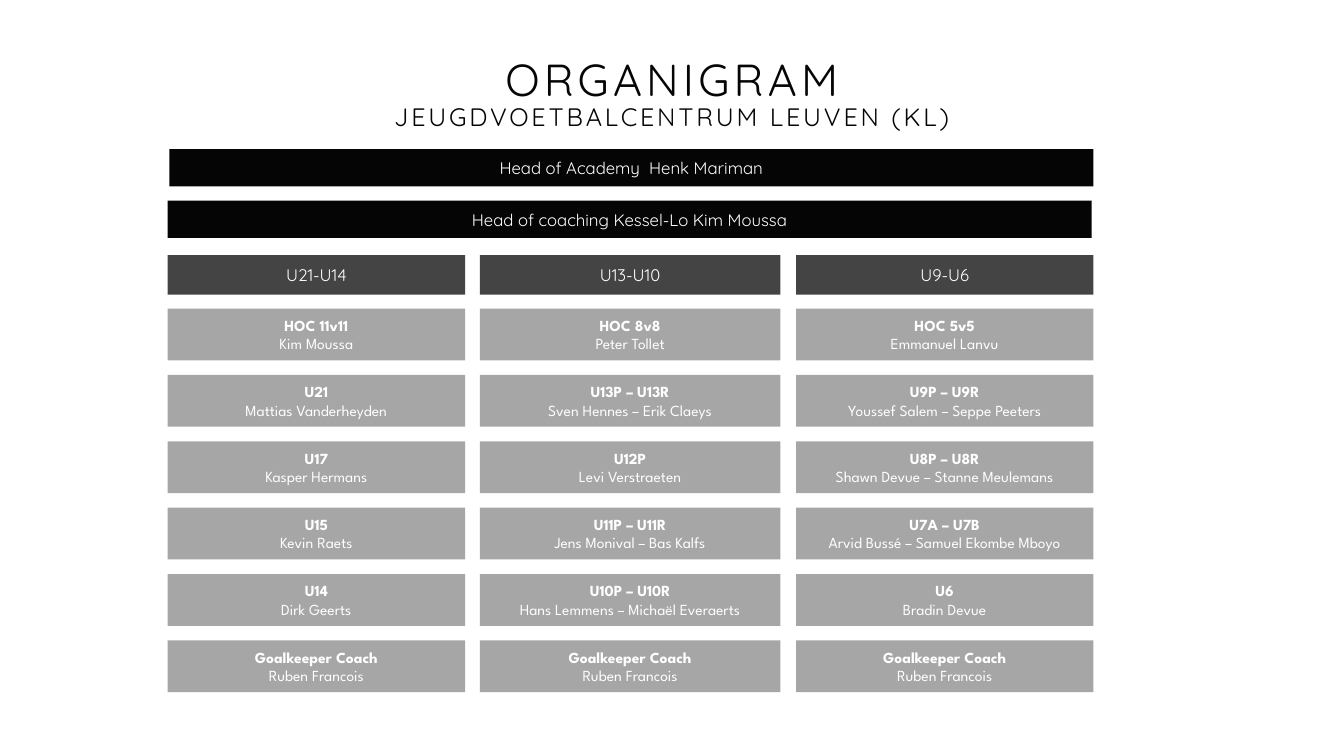
from dataclasses import dataclass

from pptx import Presentation
from pptx.dml.color import RGBColor
from pptx.enum.shapes import MSO_SHAPE as Shape
from pptx.enum.text import MSO_ANCHOR as Anchor, MSO_AUTO_SIZE as AutoSize, PP_ALIGN as Align
from pptx.util import Pt


@dataclass(frozen=True)
class Theme:
    black: RGBColor = RGBColor(0x05, 0x05, 0x05)
    dark: RGBColor = RGBColor(0x44, 0x44, 0x44)
    gray: RGBColor = RGBColor(0xA6, 0xA6, 0xA6)
    white: RGBColor = RGBColor(0xFF, 0xFF, 0xFF)
    heading_font: str = "Quicksand"
    card_font: str = "League Spartan"
    title_size: int = 32
    subtitle_size: int = 18
    bar_size: int = 12
    card_size: int = 11


THEME = Theme()
PAGE_WIDTH, PAGE_HEIGHT = 960, 540

# Leadership bars: text, left, top
BARS = [
    ("Head of Academy  Henk Mariman", 121, 106.6),
    ("Head of coaching Kessel-Lo Kim Moussa", 119.8, 143.4),
]
BAR_WIDTH, BAR_HEIGHT = 660, 26.6

# Age groups: heading, left, width, then (team, coaches) from top to bottom
AGE_GROUPS = [
    ("U21-U14", 119.8, 212.4, [
        ("HOC 11v11", "Kim Moussa"),
        ("U21", "Mattias Vanderheyden"),
        ("U17", "Kasper Hermans"),
        ("U15", "Kevin Raets"),
        ("U14", "Dirk Geerts"),
        ("Goalkeeper Coach", "Ruben Francois"),
    ]),
    ("U13-U10", 342.8, 214.6, [
        ("HOC 8v8", "Peter Tollet"),
        ("U13P – U13R", "Sven Hennes – Erik Claeys"),
        ("U12P", "Levi Verstraeten"),
        ("U11P – U11R", "Jens Monival – Bas Kalfs"),
        ("U10P – U10R", "Hans Lemmens – Michaël Everaerts"),
        ("Goalkeeper Coach", "Ruben Francois"),
    ]),
    ("U9-U6", 568.6, 212.4, [
        ("HOC 5v5", "Emmanuel Lanvu"),
        ("U9P – U9R", "Youssef Salem – Seppe Peeters"),
        ("U8P – U8R", "Shawn Devue – Stanne Meulemans"),
        ("U7A – U7B", "Arvid Bussé – Samuel Ekombe Mboyo"),
        ("U6", "Bradin Devue"),
        ("Goalkeeper Coach", "Ruben Francois"),
    ]),
]
GROUP_TOP, GROUP_HEIGHT = 182.2, 28.2
CARD_TOP, CARD_STEP, CARD_HEIGHT = 220.4, 47.4, 37


def add_span(para, text, font, size, color, bold=False):
    para.alignment = Align.CENTER
    span = para.add_run()
    span.text = text
    span.font.name = font
    span.font.size = Pt(size)
    span.font.color.rgb = color
    span.font.bold = bold
    return span


def fill_heading(box, text, top, height, size, tracking, anchor):
    """Full-width, letter-spaced heading line."""
    box.left, box.top = Pt(0), Pt(top)
    box.width, box.height = Pt(PAGE_WIDTH), Pt(height)
    frame = box.text_frame
    frame.word_wrap = True
    frame.auto_size = AutoSize.NONE
    frame.vertical_anchor = anchor
    para = frame.paragraphs[0]
    para.line_spacing = 0.8
    span = add_span(para, text, THEME.heading_font, size, THEME.black)
    span.font._element.set("spc", str(tracking * 100))


def add_block(page, left, top, width, height, color):
    box = page.shapes.add_shape(Shape.RECTANGLE, Pt(left), Pt(top), Pt(width), Pt(height))
    box.shadow.inherit = False
    box.fill.solid()
    box.fill.fore_color.rgb = color
    box.line.fill.background()
    box.text_frame.word_wrap = True
    box.text_frame.vertical_anchor = Anchor.MIDDLE
    return box.text_frame


def add_bar(page, text, left, top, width, height, color):
    frame = add_block(page, left, top, width, height, color)
    add_span(frame.paragraphs[0], text, THEME.heading_font, THEME.bar_size, THEME.white)


def add_card(page, team, coaches, left, top, width):
    frame = add_block(page, left, top, width, CARD_HEIGHT, THEME.gray)
    add_span(frame.paragraphs[0], team, THEME.card_font, THEME.card_size, THEME.white, bold=True)
    add_span(frame.add_paragraph(), coaches, THEME.card_font, THEME.card_size, THEME.white)


def main():
    deck = Presentation()
    deck.slide_width, deck.slide_height = Pt(PAGE_WIDTH), Pt(PAGE_HEIGHT)
    page = deck.slides.add_slide(deck.slide_layouts[5])

    # Title and subtitle
    fill_heading(page.shapes.title, "ORGANIGRAM", 39.6, 38.9,
                 THEME.title_size, 3, Anchor.BOTTOM)
    subtitle = page.shapes.add_textbox(Pt(0), Pt(0), Pt(PAGE_WIDTH), Pt(30))
    fill_heading(subtitle, "JEUGDVOETBALCENTRUM LEUVEN (KL)", 72.7, 28.8,
                 THEME.subtitle_size, 2, Anchor.TOP)

    # Leadership
    for text, left, top in BARS:
        add_bar(page, text, left, top, BAR_WIDTH, BAR_HEIGHT, THEME.black)

    # One column per age group
    for heading, left, width, cards in AGE_GROUPS:
        add_bar(page, heading, left, GROUP_TOP, width, GROUP_HEIGHT, THEME.dark)
        for row, (team, coaches) in enumerate(cards):
            add_card(page, team, coaches, left, CARD_TOP + row * CARD_STEP, width)

    deck.save("out.pptx")


if __name__ == "__main__":
    main()
